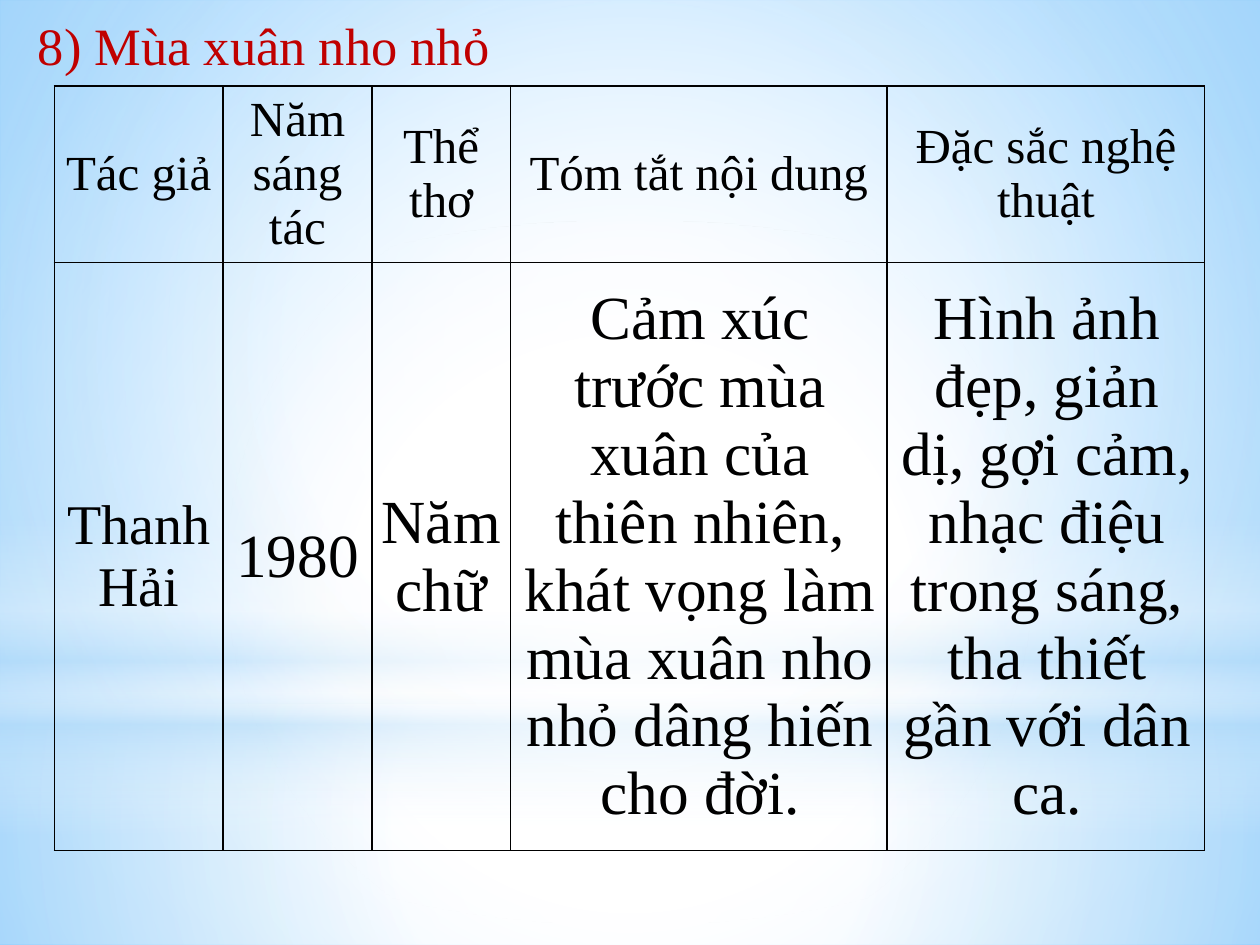
"""Build a slide that summarises the poem Mùa xuân nho nhỏ in a table."""
from typing import NamedTuple, Optional

from pptx import Presentation
from pptx.dml.color import RGBColor
from pptx.enum.shapes import MSO_SHAPE
from pptx.enum.text import MSO_ANCHOR, MSO_AUTO_SIZE, PP_ALIGN
from pptx.oxml import parse_xml
from pptx.oxml.ns import nsdecls, qn
from pptx.util import Pt

FONT = "Times New Roman"
BLACK, RED, WHITE, SKY, PALE = "000000", "C00000", "FFFFFF", "63BCFF", "B4DCFA"
CENTRE = (50, 50, 50, 50)


class Stop(NamedTuple):
    position: int
    colour: str
    opacity: int = 100


class Gradient(NamedTuple):
    stops: list[Stop]
    focus: Optional[tuple[int, int, int, int]] = None


class Glow(NamedTuple):
    outline: MSO_SHAPE
    top: float
    height: float
    gradient: Gradient


class Column(NamedTuple):
    width: float
    heading: str
    entry: str
    size: int = 35
    indent: float = 0


SKY_GRADIENT = Gradient([Stop(0, WHITE), Stop(36, WHITE), Stop(100, SKY)], (24, 44, 24, 12))
GLOWS = [
    Glow(MSO_SHAPE.RECTANGLE, 402, 138, Gradient(
        [Stop(0, WHITE, 91), Stop(37, WHITE, 76), Stop(100, PALE, 79)], CENTRE)),
    Glow(MSO_SHAPE.RECTANGLE, 0, 402, Gradient(
        [Stop(0, WHITE, 89), Stop(48, WHITE, 62), Stop(100, PALE, 79)], CENTRE)),
    Glow(MSO_SHAPE.RECTANGLE, 296.6, 180, Gradient(
        [Stop(0, WHITE, 0), Stop(29, WHITE, 30), Stop(45, PALE, 40),
         Stop(55, WHITE, 26), Stop(65, PALE, 60), Stop(100, WHITE, 0)])),
    Glow(MSO_SHAPE.OVAL, 126, 402, Gradient([Stop(0, WHITE), Stop(56, WHITE, 0)], CENTRE)),
]
COLUMNS = [
    Column(96.5, "Tác giả", "Thanh Hải", 32),
    Column(85, "Năm sáng tác", "1980"),
    Column(79.2, "Thể thơ", "Năm chữ"),
    Column(215.3, "Tóm tắt nội dung",
           "Cảm xúc trước mùa xuân của thiên nhiên, khát vọng làm mùa xuân "
           "nho nhỏ dâng hiến cho đời.", indent=1.4),
    Column(181.4, "Đặc sắc nghệ thuật",
           "Hình ảnh đẹp, giản dị, gợi cảm, nhạc điệu trong sáng, tha thiết "
           "gần với dân ca.", indent=1.4),
]
ROW_HEIGHTS = (101, 336)
CELL_FORMAT = {
    "vertical_anchor": MSO_ANCHOR.MIDDLE,
    "margin_left": Pt(5), "margin_right": Pt(5), "margin_top": 0, "margin_bottom": 0,
}
TITLE_PLACE = {"left": Pt(14.4), "top": Pt(3.6), "width": Pt(275.8), "height": Pt(43.9)}
TITLE_FRAME = {
    "word_wrap": False, "auto_size": MSO_AUTO_SIZE.SHAPE_TO_FIT_TEXT,
    "vertical_anchor": MSO_ANCHOR.TOP,
}


def apply(target, values: dict) -> None:
    """Set each named attribute on the target."""
    for name, value in values.items():
        setattr(target, name, value)


def colour(code: str) -> RGBColor:
    """Turn a hex string into a colour."""
    return RGBColor.from_string(code)


def write(paragraph, text: str, size: float, code: str, alignment: PP_ALIGN) -> None:
    """Write one formatted run in a paragraph."""
    paragraph.alignment = alignment
    run = paragraph.add_run()
    run.text = text
    apply(run.font, {"name": FONT, "size": Pt(size), "bold": False})
    run.font.color.rgb = colour(code)


def fill_gradient(properties, gradient: Gradient) -> None:
    """Replace the solid fill of a properties element with a gradient."""
    stops = "".join(
        f'<a:gs pos="{stop.position * 1000}"><a:srgbClr val="{stop.colour}">'
        f'<a:alpha val="{stop.opacity * 1000}"/></a:srgbClr></a:gs>'
        for stop in gradient.stops)
    direction = '<a:lin ang="5400000" scaled="0"/>'
    if gradient.focus:
        left, top, right, bottom = (edge * 1000 for edge in gradient.focus)
        direction = (f'<a:path path="circle"><a:fillToRect l="{left}" t="{top}" '
                     f'r="{right}" b="{bottom}"/></a:path>')
    properties.replace(properties.find(qn("a:solidFill")), parse_xml(
        f'<a:gradFill {nsdecls("a")} rotWithShape="1"><a:gsLst>{stops}</a:gsLst>'
        f'{direction}</a:gradFill>'))


def draw_glow(slide, glow: Glow) -> None:
    """Draw one full-width glow of the backdrop."""
    shape = slide.shapes.add_shape(
        glow.outline, 0, Pt(glow.top), Pt(720), Pt(glow.height))
    shape.shadow.inherit = False
    shape.line.fill.background()
    shape.fill.solid()
    fill_gradient(shape.element.spPr, glow.gradient)


def draw_title(slide, text: str) -> None:
    """Place the title in front of the backdrop."""
    title = slide.shapes.title
    apply(title, TITLE_PLACE)
    apply(title.text_frame, TITLE_FRAME)
    write(title.text_frame.paragraphs[0], text, 30, RED, PP_ALIGN.LEFT)
    title.element.getparent().append(title.element)


def draw_cell(cell, text: str, size: float, indent: float = 0) -> None:
    """Fill one bordered cell with centred text."""
    apply(cell, CELL_FORMAT)
    cell.fill.background()
    properties = cell._tc.get_or_add_tcPr()
    for position, side in enumerate("LRTB"):
        properties.insert(position, parse_xml(
            f'<a:ln{side} {nsdecls("a")} w="{Pt(1)}"><a:solidFill>'
            f'<a:srgbClr val="{BLACK}"/></a:solidFill></a:ln{side}>'))
    paragraph = cell.text_frame.paragraphs[0]
    write(paragraph, text, size, BLACK, PP_ALIGN.CENTER)
    if indent:
        paragraph._p.get_or_add_pPr().set("marL", str(Pt(indent)))


def draw_table(slide, columns: list[Column]) -> None:
    """Draw the summary table of the poem."""
    width = sum(column.width for column in columns)
    table = slide.shapes.add_table(
        len(ROW_HEIGHTS), len(columns), Pt(31), Pt(49), Pt(width), Pt(sum(ROW_HEIGHTS))).table
    apply(table, {"first_row": False, "horz_banding": False})
    for row, height in zip(table.rows, ROW_HEIGHTS):
        row.height = Pt(height)
    for index, column in enumerate(columns):
        table.columns[index].width = Pt(column.width)
        draw_cell(table.cell(0, index), column.heading, 28)
        draw_cell(table.cell(1, index), column.entry, column.size, column.indent)


def main() -> None:
    """Build and save the presentation."""
    presentation = Presentation()
    apply(presentation, {"slide_width": Pt(720), "slide_height": Pt(540)})
    slide = presentation.slides.add_slide(presentation.slide_layouts.get_by_name("Title Only"))
    slide.background.fill.solid()
    fill_gradient(next(slide.element.iter(qn("p:bgPr"))), SKY_GRADIENT)
    for glow in GLOWS:
        draw_glow(slide, glow)
    draw_title(slide, "8) Mùa xuân nho nhỏ")
    draw_table(slide, COLUMNS)
    presentation.save("out.pptx")


if __name__ == "__main__":
    main()
